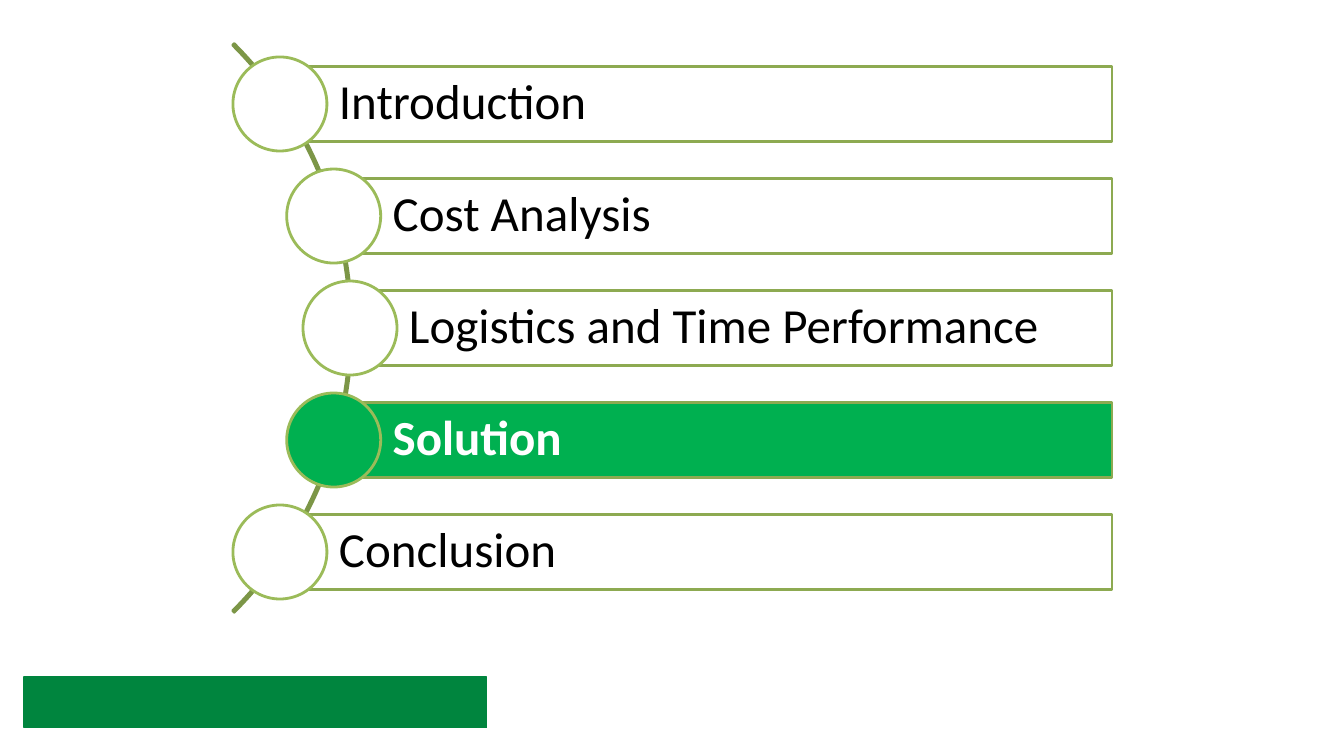
"""Build an agenda slide: five topics along an arc, the current one highlighted."""
import math

import pptx
import pptx.dml.color
import pptx.enum.shapes
import pptx.enum.text
import pptx.util

RGBColor = pptx.dml.color.RGBColor
Shape = pptx.enum.shapes.MSO_SHAPE

TOPICS = [
    "Introduction",
    "Cost Analysis",
    "Logistics and Time Performance",
    "Solution",
    "Conclusion",
]
CURRENT_TOPIC = "Solution"

WHITE = RGBColor(0xFF, 0xFF, 0xFF)
BLACK = RGBColor(0x00, 0x00, 0x00)
HIGHLIGHT = RGBColor(0x00, 0xB0, 0x50)
ARC_LINE = RGBColor(0x7C, 0x96, 0x47)
BAR_LINE = RGBColor(0x8D, 0xAA, 0x51)
NODE_LINE = RGBColor(0x9B, 0xBB, 0x59)
FOOTER_GREEN = RGBColor(0x00, 0x85, 0x3E)

EMU_PER_PX = 914400 / 100.8
SLIDE_SIZE = (1344, 756)
ARC_BOX = (-452, -74, 804, 804)
FOOTER_BOX = (24, 677, 463, 51)
MIDDLE_Y = 328
ROW_PITCH = 112
NODE_PATH_X = -43
NODE_PATH_RADIUS = 393
NODE_SIZE = 94
BAR_HEIGHT = 75
BAR_RIGHT = 1112
TEXT_INDENT = 59
TEXT_MARGIN = 10


def px(length):
    return pptx.util.Emu(round(length * EMU_PER_PX))


def add_outline(slide, kind, box, line, fill=None, width=2):
    shape = slide.shapes.add_shape(kind, *map(px, box))
    shape.shadow.inherit = False
    if fill is None:
        shape.fill.background()
    else:
        shape.fill.solid()
        shape.fill.fore_color.rgb = fill
    shape.line.color.rgb = line
    shape.line.width = pptx.util.Pt(width)
    return shape


def write_text(shape, text, *, color, bold=False, size=35, font="Calibri"):
    frame = shape.text_frame
    frame.word_wrap = True
    frame.vertical_anchor = pptx.enum.text.MSO_ANCHOR.MIDDLE
    frame.margin_left = px(TEXT_INDENT)
    frame.margin_top = frame.margin_right = frame.margin_bottom = px(TEXT_MARGIN)
    paragraph = frame.paragraphs[0]
    paragraph.alignment = pptx.enum.text.PP_ALIGN.LEFT
    paragraph.line_spacing = 0.9
    run = paragraph.add_run()
    run.text = text
    run.font.name = font
    run.font.size = pptx.util.Pt(size)
    run.font.bold = bold
    run.font.color.rgb = color


def add_topic(slide, index, topic):
    current = topic == CURRENT_TOPIC
    fill = HIGHLIGHT if current else WHITE
    offset = (index - (len(TOPICS) - 1) / 2) * ROW_PITCH
    center_x = NODE_PATH_X + math.sqrt(NODE_PATH_RADIUS ** 2 - offset ** 2)
    center_y = MIDDLE_Y + offset

    bar_box = (center_x, center_y - BAR_HEIGHT / 2, BAR_RIGHT - center_x, BAR_HEIGHT)
    bar = add_outline(slide, Shape.RECTANGLE, bar_box, BAR_LINE, fill)
    write_text(bar, topic, color=WHITE if current else BLACK, bold=current)

    node_box = (center_x - NODE_SIZE / 2, center_y - NODE_SIZE / 2, NODE_SIZE, NODE_SIZE)
    add_outline(slide, Shape.OVAL, node_box, NODE_LINE, fill)


def main():
    presentation = pptx.Presentation()
    presentation.slide_width, presentation.slide_height = map(px, SLIDE_SIZE)
    slide = presentation.slides.add_slide(presentation.slide_layouts[6])

    arc = add_outline(slide, Shape.BLOCK_ARC, ARC_BOX, ARC_LINE)
    for index, adjustment in enumerate((189, 27, 0.0027)):
        arc.adjustments[index] = adjustment

    for index, topic in enumerate(TOPICS):
        add_topic(slide, index, topic)

    add_outline(slide, Shape.RECTANGLE, FOOTER_BOX, FOOTER_GREEN, FOOTER_GREEN, width=0.75)
    presentation.save("out.pptx")


if __name__ == "__main__":
    main()
